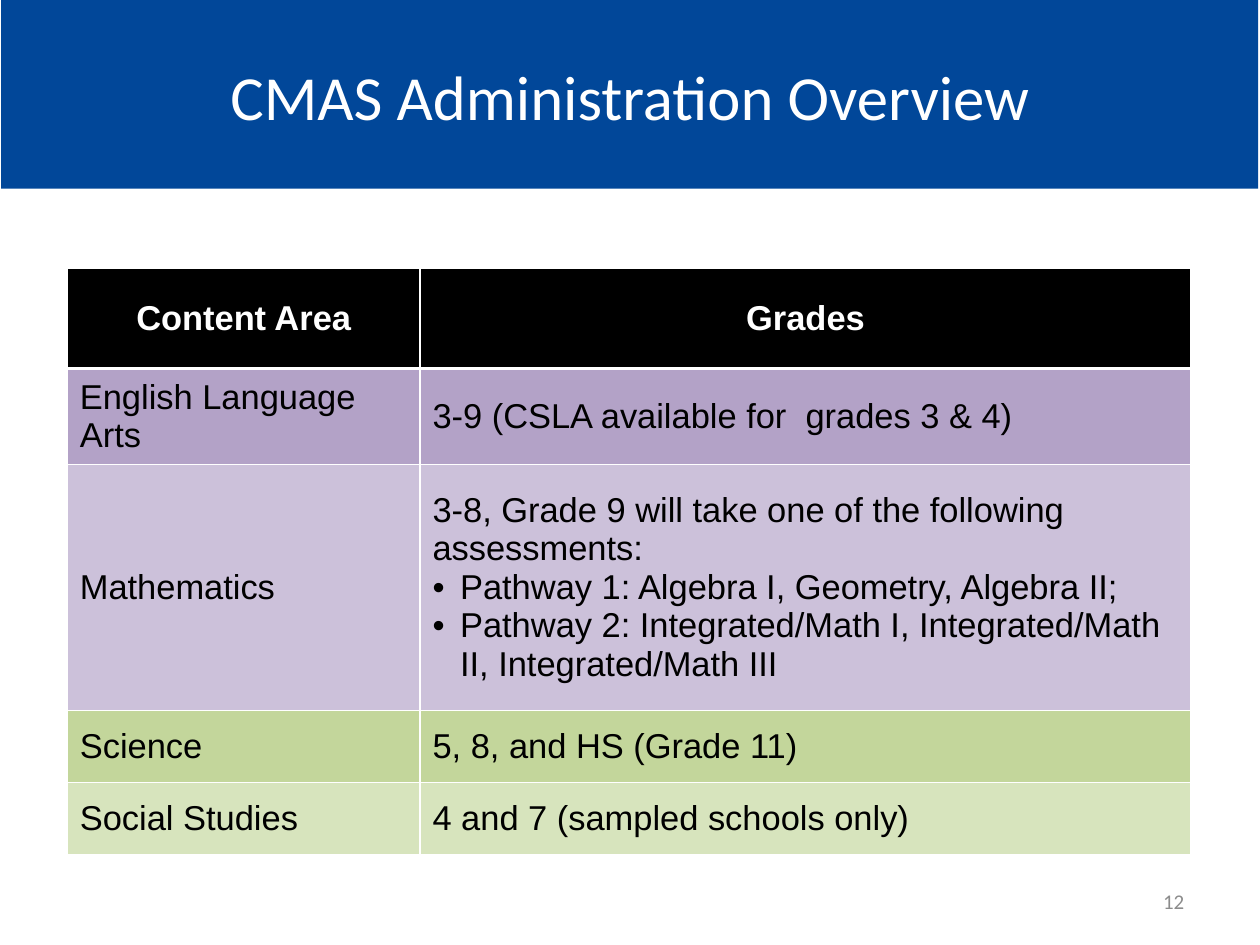
"""Build the CMAS administration overview slide with its table of grades."""
import lxml.etree
import pptx
import pptx.dml.color
import pptx.enum.shapes
import pptx.enum.text
import pptx.oxml.ns
import pptx.util
from pptx.util import Cm

TITLE = "CMAS Administration Overview"
PAGE_NUMBER = "12"
HEADINGS = ("Content Area", "Grades")
ASSESSMENTS = [
    ("English Language Arts", ["3-9 (CSLA available for  grades 3 & 4)"], 2.06, "B3A2C7"),
    ("Mathematics", [
        "3-8, Grade 9 will take one of the following assessments:",
        "Pathway 1: Algebra I, Geometry, Algebra II;",
        "Pathway 2: Integrated/Math I, Integrated/Math II, Integrated/Math III",
    ], 7.06, "CCC1DA"),
    ("Science", ["5, 8, and HS (Grade 11)"], 2.06, "C3D69B"),
    ("Social Studies", ["4 and 7 (sampled schools only)"], 2.06, "D7E4BD"),
]
HEADING_HEIGHT = 2.87
COLUMN_WIDTHS = (10.11, 22.1)
SLIDE_WIDTH, SLIDE_HEIGHT = 36.12, 27.08
WHITE, BLACK, BLUE, GREY = "FFFFFF", "000000", "014799", "8C8C8C"
ALIGN = pptx.enum.text.PP_ALIGN
MIDDLE = pptx.enum.text.MSO_ANCHOR.MIDDLE


def paint(fill, color):
    fill.solid()
    fill.fore_color.rgb = pptx.dml.color.RGBColor.from_string(color)


def set_margins(holder):
    holder.margin_left = holder.margin_right = Cm(0.36)
    holder.margin_top = holder.margin_bottom = Cm(0.18)
    holder.vertical_anchor = MIDDLE


def write(frame, lines, size, font, color, align, bold=False):
    frame.text = "\n".join(lines)
    for paragraph in frame.paragraphs:
        paragraph.alignment = align
        for run in paragraph.runs:
            run.font.size = pptx.util.Pt(size)
            run.font.name = font
            run.font.bold = bold
            paint(run.font.fill, color)


def add_xml(parent, tag, **attributes):
    texts = {key: str(value) for key, value in attributes.items()}
    return lxml.etree.SubElement(parent, pptx.oxml.ns.qn(tag), texts)


def add_bullet(paragraph):
    properties = paragraph._p.get_or_add_pPr()
    properties.set("marL", str(int(Cm(0.79))))
    properties.set("indent", str(-int(Cm(0.79))))
    add_xml(properties, "a:buFont", typeface="Arial")
    add_xml(properties, "a:buChar", char="•")


def add_borders(cell, top, bottom):
    properties = cell._tc.get_or_add_tcPr()
    for side, points in zip("LRTB", (1, 1, top, bottom)):
        line = add_xml(properties, f"a:ln{side}", w=int(pptx.util.Pt(points)))
        add_xml(add_xml(line, "a:solidFill"), "a:srgbClr", val=WHITE)


def add_heading(slide):
    band = slide.shapes.add_shape(
        pptx.enum.shapes.MSO_SHAPE.RECTANGLE, Cm(0.03), 0, Cm(36.04), Cm(5.41))
    band.shadow.inherit = False
    paint(band.fill, BLUE)
    band.line.fill.background()
    title = slide.shapes.title
    title._element.addprevious(band._element)
    title.left, title.top = Cm(0), Cm(0.46)
    title.width, title.height = Cm(SLIDE_WIDTH), Cm(4.52)
    title.text_frame.auto_size = pptx.enum.text.MSO_AUTO_SIZE.NONE
    set_margins(title.text_frame)
    write(title.text_frame, [TITLE], 51, "Calibri", WHITE, ALIGN.CENTER)


def add_page_number(slide):
    number = slide.shapes.add_textbox(Cm(25.88), Cm(25.1), Cm(8.43), Cm(1.45)).text_frame
    number.word_wrap = True
    set_margins(number)
    write(number, [PAGE_NUMBER], 17, "Calibri", GREY, ALIGN.RIGHT)


def add_grades(slide):
    heights = [HEADING_HEIGHT] + [height for _, _, height, _ in ASSESSMENTS]
    grades = slide.shapes.add_table(
        len(heights), len(COLUMN_WIDTHS), Cm(1.93), Cm(7.7),
        Cm(sum(COLUMN_WIDTHS)), Cm(sum(heights))).table
    for column, width in zip(grades.columns, COLUMN_WIDTHS):
        column.width = Cm(width)
    for row, height in zip(grades.rows, heights):
        row.height = Cm(height)

    rows = [([[heading] for heading in HEADINGS], BLACK)]
    rows += [([[area], lines], color) for area, lines, _, color in ASSESSMENTS]
    for r, (contents, color) in enumerate(rows):
        is_heading = r == 0
        for c, lines in enumerate(contents):
            cell = grades.cell(r, c)
            set_margins(cell)
            add_borders(cell, 3 if r == 1 else 1, 3 if is_heading else 1)
            paint(cell.fill, color)
            write(cell.text_frame, lines, 28, "Arial",
                  WHITE if is_heading else BLACK,
                  ALIGN.CENTER if is_heading else ALIGN.LEFT, is_heading)
            for paragraph in cell.text_frame.paragraphs[1:]:
                add_bullet(paragraph)


def main():
    deck = pptx.Presentation()
    deck.slide_width, deck.slide_height = Cm(SLIDE_WIDTH), Cm(SLIDE_HEIGHT)
    slide = deck.slides.add_slide(deck.slide_layouts.get_by_name("Title Only"))
    add_heading(slide)
    add_page_number(slide)
    add_grades(slide)
    deck.save("out.pptx")


if __name__ == "__main__":
    main()
